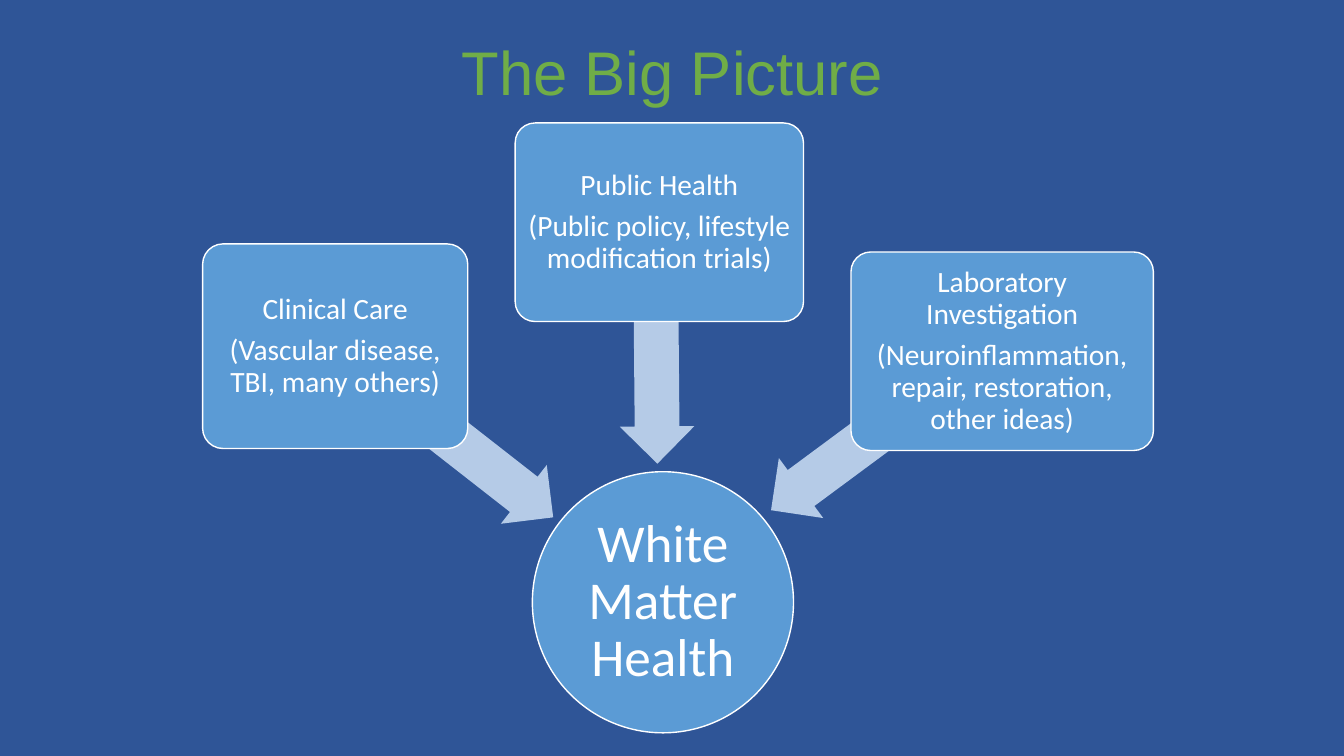
from pptx import Presentation
from pptx.dml.color import RGBColor
from pptx.enum.shapes import MSO_SHAPE
from pptx.enum.text import MSO_ANCHOR, PP_ALIGN
from pptx.util import Emu, Pt

OVAL, ROUND, ARROW = MSO_SHAPE.OVAL, MSO_SHAPE.ROUNDED_RECTANGLE, MSO_SHAPE.LEFT_ARROW
MIDDLE, CENTER = MSO_ANCHOR.MIDDLE, PP_ALIGN.CENTER
SCALE = 9144  # EMU per px, 100 px to the inch
COLORS = {"back": "2F5597", "title": "70AD47", "node": "5B9BD5",
          "arrow": "B5CBE7", "white": "FFFFFF"}

# Each cause: box, arrow box, arrow turn in degrees, lines of text
CAUSES = [
    ((201, 242, 263, 203), (310, 394, 267, 74), 218,
     ["Clinical Care", "(Vascular disease, TBI, many others)"]),
    ((511, 122, 286, 197), (534, 306, 234, 74), 269.5,
     ["Public Health", "(Public policy, lifestyle modification trials)"]),
    ((844, 250, 300, 197), (738, 388, 273, 74), 323.5,
     ["Laboratory Investigation",
      "(Neuroinflammation, repair, restoration, other ideas)"]),
]


def px(n):
    return Emu(round(n * SCALE))


def color(name):
    return RGBColor.from_string(COLORS[name])


def apply(item, values):
    for key, value in values.items():
        setattr(item, key, value)


def write(frame, lines, size, font, tint, inset, gap=0):
    apply(frame, {"word_wrap": True, "vertical_anchor": MIDDLE})
    apply(frame, {f"margin_{side}": px(inset)
                  for side in ("left", "top", "right", "bottom")})
    for i, line in enumerate(lines):
        para = frame.paragraphs[0] if i == 0 else frame.add_paragraph()
        apply(para, {"alignment": CENTER, "line_spacing": 0.9,
                     "space_before": Pt(0), "space_after": Pt(gap)})
        run = para.add_run()
        apply(run, {"text": line})
        apply(run.font, {"size": Pt(size), "name": font})
        run.font.color.rgb = color(tint)


def shape(slide, kind, box, fill, line=None):
    item = slide.shapes.add_shape(kind, *map(px, box))
    item.shadow.inherit = False
    item.fill.solid()
    item.fill.fore_color.rgb = color(fill)
    if line:
        item.line.color.rgb = color(line)
        item.line.width = Pt(1)
    else:
        item.line.fill.background()
    return item


def heading(slide, box, text):
    title = slide.shapes.title
    apply(title, dict(zip(("left", "top", "width", "height"), map(px, box))))
    write(title.text_frame, [text], 44, "Arial", "title", 5)


def goal(slide, box, text):
    disc = shape(slide, OVAL, box, "node", "white")
    write(disc.text_frame, [text], 38, "Calibri", "white", 3)


def cause(slide, box, track, turn, lines):
    # Arrow sits behind its box
    arrow = shape(slide, ARROW, track, "arrow")
    arrow.rotation = turn
    arrow.adjustments[0], arrow.adjustments[1] = 0.6, 0.5
    # Box with its text
    card = shape(slide, ROUND, box, "node", "white")
    card.adjustments[0] = 0.1
    write(card.text_frame, lines, 21, "Calibri", "white", 4, 7)


def main():
    deck = Presentation()
    apply(deck, {"slide_width": px(1333), "slide_height": px(750)})
    slide = deck.slides.add_slide(deck.slide_layouts[5])
    slide.background.fill.solid()
    slide.background.fill.fore_color.rgb = color("back")

    # Title, central goal, then the three causes
    heading(slide, (92, 15, 1150, 120), "The Big Picture")
    goal(slide, (528, 468, 259, 259), "White Matter Health")
    for parts in CAUSES:
        cause(slide, *parts)
    deck.save("out.pptx")


if __name__ == "__main__":
    main()
